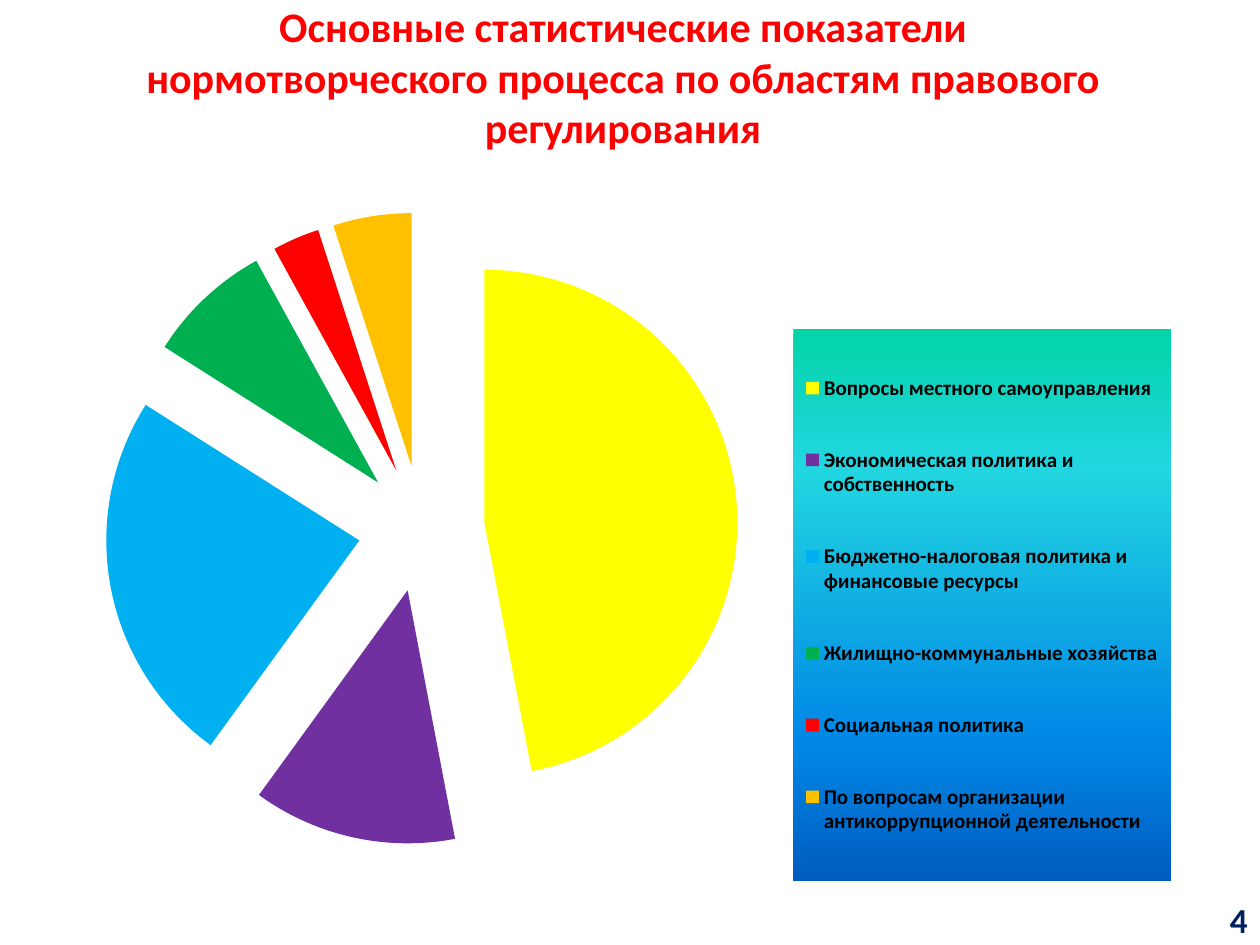
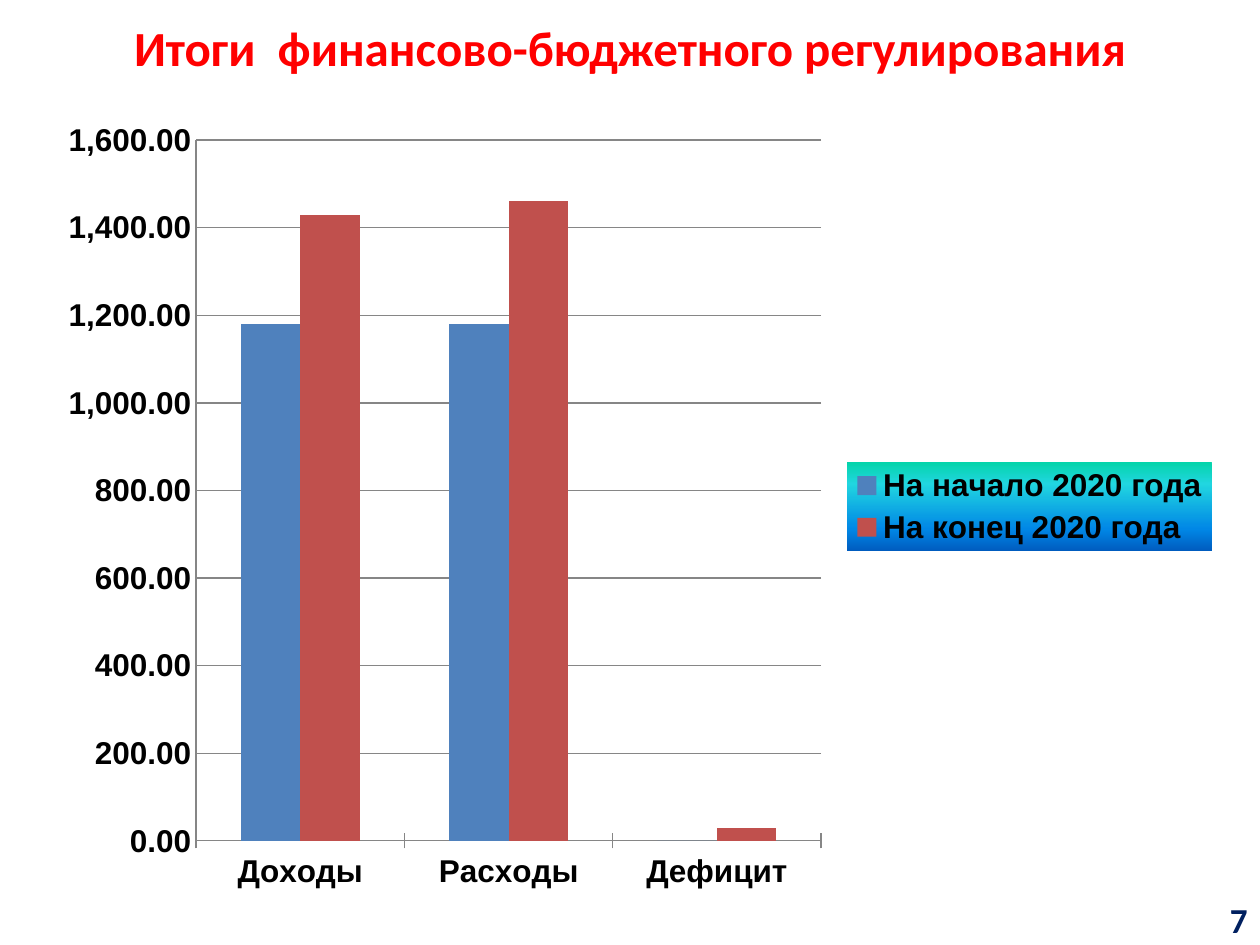
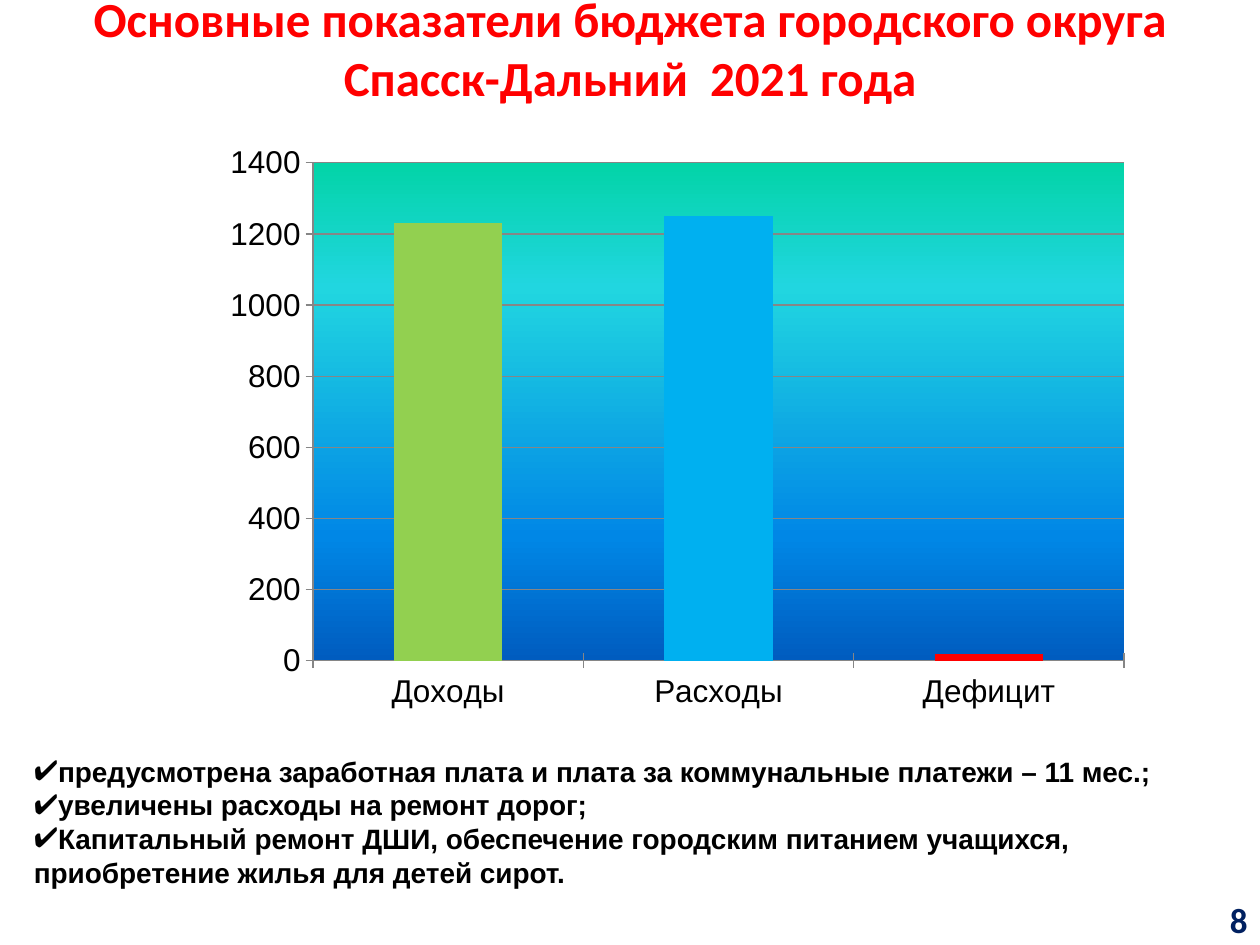
from copy import deepcopy

from lxml import etree
from pptx import Presentation
from pptx import util as u
from pptx.chart.data import CategoryChartData
from pptx.dml.color import RGBColor
from pptx.enum import chart as ch
from pptx.enum import text as t
from pptx.oxml import parse_xml
from pptx.oxml.ns import nsdecls, qn

WIDTH, HEIGHT = 10, 7.5
COLORS = {
    "title": "FF0000", "number": "002060", "ink": "000000", "axis": "868686",
    "yellow": "FFFF00", "purple": "7030A0", "sky": "00B0F0", "green": "00B050",
    "red": "FF0000", "amber": "FFC000", "blue": "4F81BD", "brick": "C0504D",
    "lime": "92D050",
}
SEA = [(0, "03D4A8"), (25, "21D6E0"), (75, "0087E6"), (100, "005CBF")]
BUDGET = ["Доходы", "Расходы", "Дефицит"]

AREAS = [
    ("Вопросы местного самоуправления", 47, "yellow"),
    ("Экономическая политика и собственность", 13, "purple"),
    ("Бюджетно-налоговая политика и финансовые ресурсы", 24, "sky"),
    ("Жилищно-коммунальные хозяйства", 8, "green"),
    ("Социальная политика", 3, "red"),
    ("По вопросам организации антикоррупционной деятельности", 5, "amber"),
]
RESULTS = [
    ("На начало 2020 года", (1180, 1180, 0), "blue"),
    ("На конец 2020 года", (1430, 1460, 30), "brick"),
]
PLAN = [
    ("Series 1", (1230, None, None), "lime"),
    ("Series 2", (None, 1250, None), "sky"),
    ("Series 3", (None, None, 20), "red"),
]
MEASURES = [
    "предусмотрена заработная плата и плата за коммунальные платежи – 11 мес.;",
    "увеличены расходы на ремонт дорог;",
    "Капитальный ремонт ДШИ, обеспечение городским питанием учащихся, "
    "приобретение жилья для детей сирот.",
]


def rgb(name):
    return RGBColor.from_string(COLORS[name])


def style(font, size, color="ink", bold=False, face="Arial"):
    font.size, font.bold, font.name = u.Pt(size), bold, face
    font.color.rgb = rgb(color)


def place(shape, left, top, width, height):
    shape.left, shape.top = u.Inches(left), u.Inches(top)
    shape.width, shape.height = u.Inches(width), u.Inches(height)


def write(shape, *lines, align=t.PP_ALIGN.LEFT, bullet=None, **look):
    frame = shape.text_frame
    frame.word_wrap = True
    frame.auto_size = t.MSO_AUTO_SIZE.NONE
    frame.vertical_anchor = t.MSO_ANCHOR.MIDDLE
    frame.text = "\n".join(lines)
    for paragraph in frame.paragraphs:
        paragraph.alignment = align
        if bullet:
            props = paragraph._p.get_or_add_pPr()
            props.set("marL", "0")
            props.set("indent", str(-u.Inches(0.12)))
            etree.SubElement(props, qn("a:buFont")).set("typeface", "Arial")
            etree.SubElement(props, qn("a:buChar")).set("char", bullet)
        for run in paragraph.runs:
            style(run.font, **look)
        for line_break in paragraph._p.findall(qn("a:br")):
            line_break.append(deepcopy(paragraph.runs[0]._r.rPr))


def add_slide(deck, title, number, title_box=(0, 0, WIDTH, 0.75), title_size=28):
    slide = deck.slides.add_slide(deck.slide_layouts[5])
    heading = slide.shapes.title
    place(heading, *title_box)
    write(heading, title, align=t.PP_ALIGN.CENTER, size=title_size,
          color="title", bold=True, face="Calibri")
    corner = slide.shapes.add_textbox(0, 0, 0, 0)
    place(corner, WIDTH - 2.33, HEIGHT - 0.4, 2.33, 0.4)
    write(corner, number, align=t.PP_ALIGN.RIGHT, size=20, color="number",
          bold=True, face="Calibri")
    return slide


def sea_fill():
    stops = "".join(f'<a:gs pos="{share * 1000}"><a:srgbClr val="{color}"/></a:gs>'
                    for share, color in SEA)
    return parse_xml(f'<c:spPr {nsdecls("c", "a")}><a:gradFill><a:gsLst>{stops}</a:gsLst>'
                     '<a:lin ang="5400000" scaled="0"/></a:gradFill></c:spPr>')


def layout(box, inner=False):
    """Manual chart layout; box holds x, y, w, h as shares of the chart."""
    target = '<c:layoutTarget val="inner"/>' if inner else ""
    modes = '<c:xMode val="edge"/><c:yMode val="edge"/>'
    sides = "".join(f'<c:{side} val="{share}"/>' for side, share in zip("xywh", box))
    return parse_xml(f'<c:layout {nsdecls("c")}><c:manualLayout>{target}{modes}{sides}'
                     '</c:manualLayout></c:layout>')


def drop_layout(part):
    for old in part.findall(qn("c:layout")):
        part.remove(old)


def add_chart(slide, kind, categories, series, box, plot_box):
    data = CategoryChartData()
    data.categories = categories
    for name, values, _ in series:
        data.add_series(name, values)
    chart = slide.shapes.add_chart(kind, *map(u.Inches, box), data).chart
    chart.has_title = chart.has_legend = False
    style(chart.font, 18)
    plot_area = chart._chartSpace.chart.plotArea
    drop_layout(plot_area)
    plot_area.insert(0, layout(plot_box, inner=True))
    return chart, plot_area


def add_legend(chart, size, face="Arial", box=None):
    chart.has_legend = True
    legend = chart.legend
    legend.position = ch.XL_LEGEND_POSITION.RIGHT
    legend.include_in_layout = False
    style(legend.font, size, bold=True, face=face)
    element = legend._element
    if box:
        drop_layout(element)
        element.find(qn("c:legendPos")).addnext(layout(box))
    element.find(qn("c:overlay")).addnext(sea_fill())


def format_columns(chart, series, bold, value_tick, number_format):
    chart.plots[0].gap_width = 150
    chart.plots[0].vary_by_categories = False
    for bars, (_, _, color) in zip(chart.plots[0].series, series):
        bars.format.fill.solid()
        bars.format.fill.fore_color.rgb = rgb(color)
        bars.invert_if_negative = False
    values = chart.value_axis
    values.has_major_gridlines = True
    values.tick_labels.number_format = number_format
    values.tick_labels.number_format_is_linked = False
    ticks = ((chart.category_axis, ch.XL_TICK_MARK.CROSS), (values, value_tick))
    for axis, tick in ticks:
        axis.major_tick_mark = tick
        axis.minor_tick_mark = ch.XL_TICK_MARK.NONE
        style(axis.tick_labels.font, 18, bold=bold)
    for part in (chart.category_axis, values, values.major_gridlines):
        part.format.line.color.rgb = rgb("axis")
        part.format.line.width = u.Pt(0.75)


def areas_slide(deck):
    slide = add_slide(
        deck, "Основные статистические показатели\v"
        "нормотворческого процесса по областям правового регулирования",
        "4", title_box=(0, 0.12, 9.89, 0.97), title_size=24)
    names, shares, colors = zip(*AREAS)
    chart, _ = add_chart(slide, ch.XL_CHART_TYPE.PIE, names,
                         [("Series 1", shares, None)],
                         (0.57, 1.34, 8.81, 5.77), (0, 0.06, 0.63, 0.87))
    pie = chart.plots[0].series[0]
    for index, color in enumerate(colors):
        fill = pie.points[index].format.fill
        fill.solid()
        fill.fore_color.rgb = rgb(color)
    explosion = parse_xml(f'<c:explosion {nsdecls("c")} val="25"/>')
    pie._element.find(qn("c:tx")).addnext(explosion)
    add_legend(chart, 12, "Calibri", (0.65, 0.22, 0.34, 0.76))


def results_slide(deck):
    slide = add_slide(deck, "Итоги  финансово-бюджетного регулирования", "7")
    chart, _ = add_chart(slide, ch.XL_CHART_TYPE.COLUMN_CLUSTERED, BUDGET, RESULTS,
                         (0.34, 0.86, 9.36, 6.32), (0.13, 0.04, 0.53, 0.88))
    format_columns(chart, RESULTS, True, ch.XL_TICK_MARK.INSIDE, "#,##0.00")
    add_legend(chart, 18)


def plan_slide(deck):
    slide = add_slide(
        deck, "Основные показатели бюджета городского округа Спасск-Дальний  2021 года", "8")
    measures = slide.shapes.add_textbox(0, 0, 0, 0)
    place(measures, 0.17, 5.79, WIDTH - 0.17, 1.46)
    write(measures, *MEASURES, bullet="✔", size=16, bold=True)
    chart, plot_area = add_chart(slide, ch.XL_CHART_TYPE.COLUMN_STACKED, BUDGET, PLAN,
                                 (1.67, 1.06, 7.4, 4.65), (0.11, 0.05, 0.87, 0.85))
    format_columns(chart, PLAN, False, ch.XL_TICK_MARK.CROSS, "General")
    chart.plots[0].overlap = 100
    plot_area.append(sea_fill())


def main():
    deck = Presentation()
    deck.slide_width, deck.slide_height = u.Inches(WIDTH), u.Inches(HEIGHT)
    for build in (areas_slide, results_slide, plan_slide):
        build(deck)
    deck.save("out.pptx")


if __name__ == "__main__":
    main()
